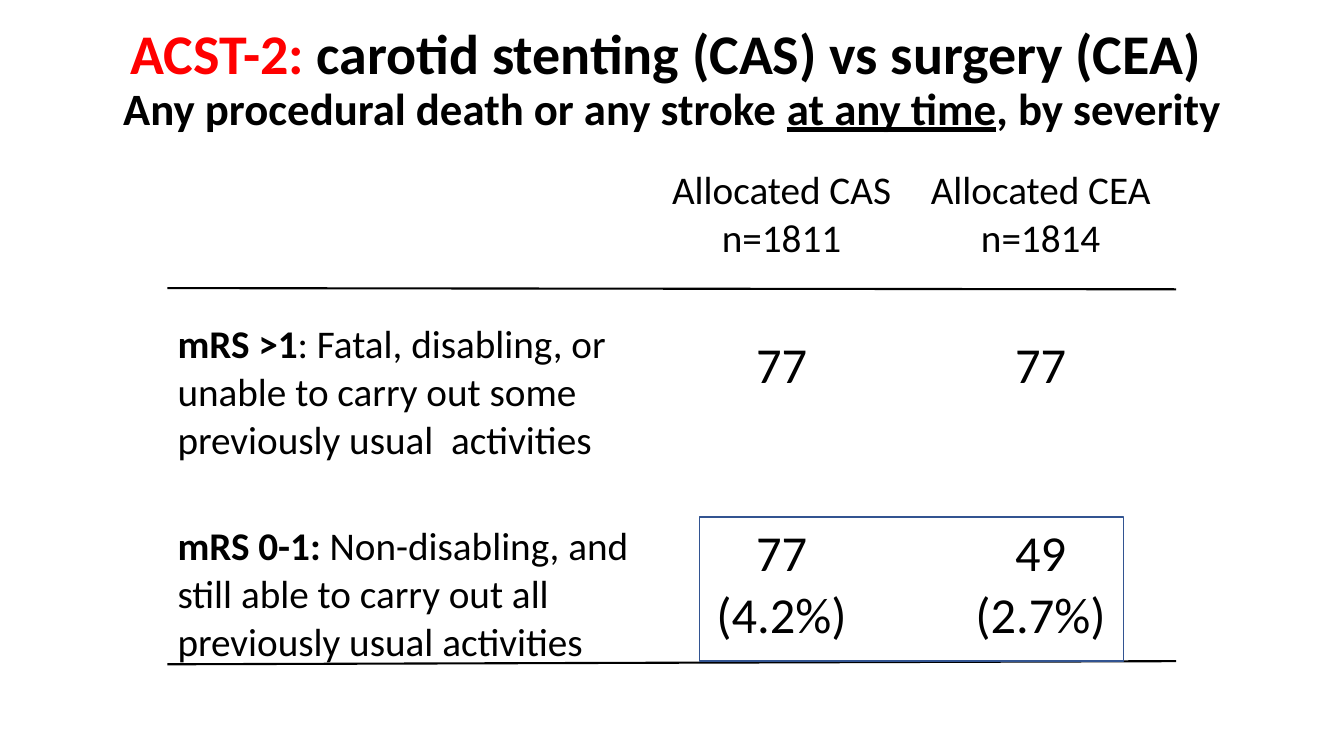
from dataclasses import dataclass
from lxml.etree import SubElement as Sub
from pptx import Presentation as Deck
from pptx.dml.color import RGBColor as Color
from pptx.enum.shapes import MSO_CONNECTOR as Link, MSO_SHAPE as Form
from pptx.enum.text import MSO_ANCHOR as Anchor, PP_ALIGN as Align
from pptx.oxml.ns import qn
from pptx.util import Cm, Pt


@dataclass(frozen=True)
class Theme:
    font: str = "Calibri"
    ink: Color = Color(0, 0, 0)
    red: Color = Color(255, 0, 0)
    frame: Color = Color(0x32, 0x54, 0x91)
    title: int = 40
    sub: int = 32
    body: int = 28
    count: int = 36


LOOK = Theme()


@dataclass(frozen=True)
class Run:
    text: str
    bold: bool = False
    under: bool = False
    color: Color = LOOK.ink


@dataclass(frozen=True)
class Rule:
    left: float
    top: float
    right: float
    end: float


@dataclass(frozen=True)
class Entry:
    lines: list[list[Run]]
    size: int = LOOK.body
    align: Align = Align.CENTER
    anchor: Anchor = Anchor.TOP
    pad: float = 0.13


def write(frame, lines: list[list[Run]], *, sizes: list[int],
          align: Align = Align.CENTER, space: float | None = None) -> None:
    frame.word_wrap = True
    for i, (line, size) in enumerate(zip(lines, sizes)):
        para = frame.paragraphs[0] if i == 0 else frame.add_paragraph()
        para.alignment = align
        if space:
            para.line_spacing = space
        for part in line:
            run = para.add_run()
            run.text = part.text
            font = run.font
            font.name, font.size = LOOK.font, Pt(size)
            font.bold, font.underline = part.bold, part.under
            font.color.rgb = part.color


def plain(*texts: str) -> list[list[Run]]:
    return [[Run(text)] for text in texts]


def label(head: str, first: str, *rest: str, pad: float = 0.13) -> Entry:
    lines = [[Run(head, bold=True), Run(first)], *plain(*rest)]
    return Entry(lines, align=Align.LEFT, pad=pad)


def head(*texts: str) -> Entry:
    return Entry(plain(*texts), anchor=Anchor.MIDDLE)


def count(*texts: str, pad: float = 0.13) -> Entry:
    return Entry(plain(*texts), size=LOOK.count, pad=pad)


TITLE = [
    [Run("ACST-2: ", bold=True, color=LOOK.red),
     Run("carotid stenting (CAS) vs surgery (CEA) ", bold=True)],
    [Run("Any procedural death or any stroke ", bold=True),
     Run("at any time", bold=True, under=True),
     Run(", by severity", bold=True)],
]
COLS = [12.4, 6.15, 6.91]
ROWS = [2.67, 6.3, 3.66]
GRID = [
    [Entry([]), head("Allocated CAS", "n=1811"), head("Allocated CEA", "n=1814")],
    [label("mRS >1", ": Fatal, disabling, or",
           "unable to carry out some previously usual  activities", pad=1.33),
     count("77", pad=1.68), count("77", pad=1.68)],
    [label("mRS 0-1: ", "Non-disabling, and", "still able to carry out all",
           "previously usual activities"),
     count("77", "(4.2%)"), count("49", "(2.7%)")],
]
RULES = [Rule(4.22, 7.26, 29.64, 7.29), Rule(4.22, 16.74, 29.64, 16.66)]


def fill(cell, entry: Entry) -> None:
    cell.fill.background()
    cell.vertical_anchor = entry.anchor
    cell.margin_top = Cm(entry.pad)
    write(cell.text_frame, entry.lines, sizes=[entry.size] * len(entry.lines),
          align=entry.align)


def tabulate(slide) -> None:
    table = slide.shapes.add_table(len(ROWS), len(COLS), Cm(4.22), Cm(4.09),
                                   Cm(sum(COLS)), Cm(sum(ROWS))).table
    table.first_row = table.horz_banding = False
    for col, width in zip(table.columns, COLS):
        col.width = Cm(width)
    for row, high, entries in zip(table.rows, ROWS, GRID):
        row.height = Cm(high)
        for cell, entry in zip(row.cells, entries):
            fill(cell, entry)


def draw(slide, rule: Rule) -> None:
    line = slide.shapes.add_connector(Link.STRAIGHT, Cm(rule.left), Cm(rule.top),
                                      Cm(rule.right), Cm(rule.end))
    line.line.color.rgb = LOOK.ink
    line.line.width = Pt(1.5)
    Sub(line._element.spPr, qn("a:effectLst"))


def main() -> None:
    deck = Deck()
    deck.slide_width, deck.slide_height = Cm(33.87), Cm(19.05)
    slide = deck.slides.add_slide(deck.slide_layouts[6])

    # Title
    box = slide.shapes.add_textbox(0, Cm(0.53), Cm(33.87), Cm(3.68))
    write(box.text_frame, TITLE, sizes=[LOOK.title, LOOK.sub], space=0.9)

    # Results with their rules
    tabulate(slide)
    for rule in RULES:
        draw(slide, rule)

    # Frame around the non-disabling counts
    frame = slide.shapes.add_shape(Form.RECTANGLE, Cm(17.63), Cm(13.03),
                                   Cm(10.69), Cm(3.63))
    frame.shadow.inherit = False
    frame.fill.background()
    frame.line.color.rgb = LOOK.frame
    frame.line.width = Pt(1)

    deck.save("out.pptx")


if __name__ == "__main__":
    main()
